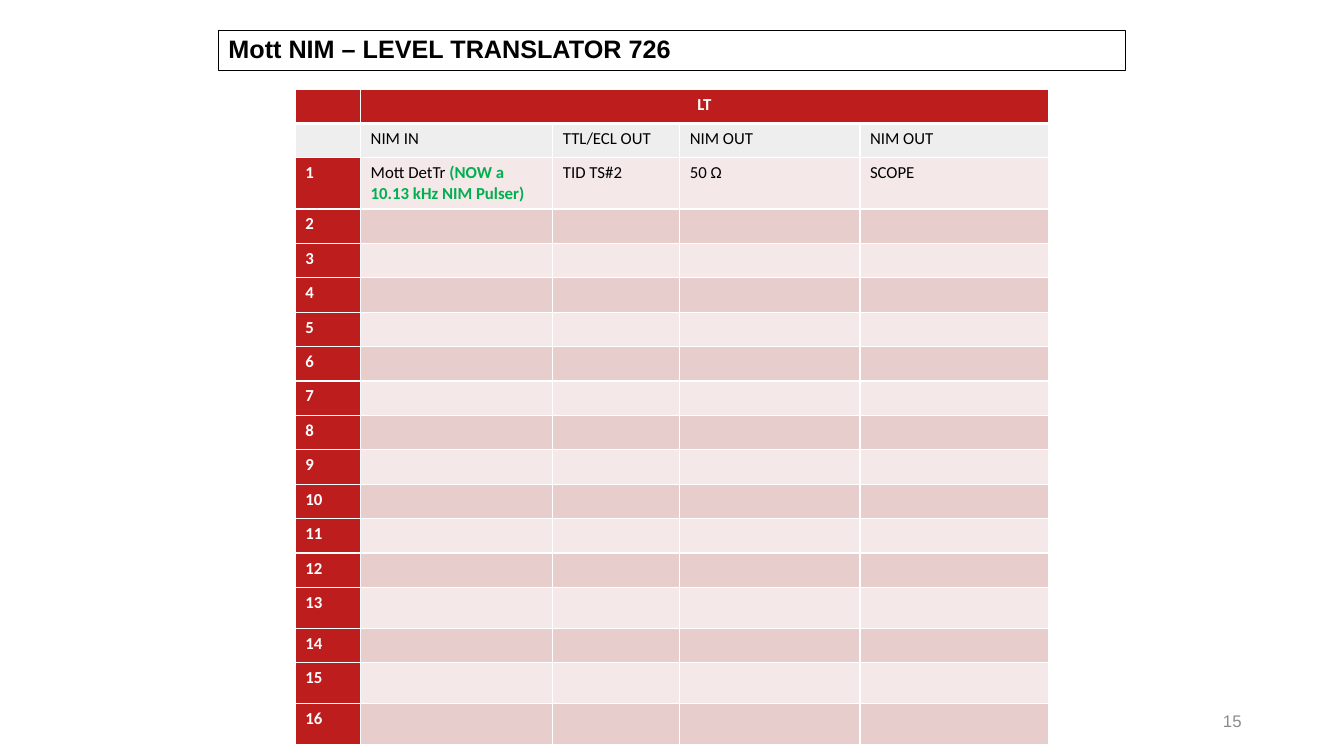
from lxml import etree
from pptx import Presentation
from pptx.dml.color import RGBColor
from pptx.enum.text import MSO_ANCHOR, MSO_AUTO_SIZE, PP_ALIGN
from pptx.oxml.ns import qn
from pptx.util import Pt

LEFT, CENTER, RIGHT = PP_ALIGN.LEFT, PP_ALIGN.CENTER, PP_ALIGN.RIGHT
MIDDLE = MSO_ANCHOR.MIDDLE
NO_FIT = MSO_AUTO_SIZE.NONE

BLACK = RGBColor(0x00, 0x00, 0x00)
WHITE = RGBColor(0xFF, 0xFF, 0xFF)
GREY = RGBColor(0x8C, 0x8C, 0x8C)
GREEN = RGBColor(0x00, 0xB0, 0x50)
RED = RGBColor(0xBE, 0x1D, 0x1D)
PALE_GREY = RGBColor(0xEE, 0xEE, 0xEE)
LIGHT_ROSE = RGBColor(0xF4, 0xE8, 0xE8)
ROSE = RGBColor(0xE8, 0xCD, 0xCD)

COLUMN_WIDTHS = [46.6, 137.3, 90.7, 128.7, 134.5]
ROW_HEIGHT, TALL_ROW_HEIGHT = 24.6, 29.2
TALL_CHANNELS = {13, 15, 16}
CHANNELS = range(1, 17)
SIGNALS = ["NIM IN", "TTL/ECL OUT", "NIM OUT", "NIM OUT"]
CHANNEL_1 = ["Mott DetTr ", "TID TS#2", "50 Ω", "SCOPE"]
PULSER_NOTE = "(NOW a 10.13 kHz NIM Pulser)"


class SlideBuilder:
    """Holds the text formats and the slide that is being filled."""

    title_format = {"name": "Arial", "size": Pt(18), "bold": True}
    number_format = {"name": "Arial", "size": Pt(12), "bold": False}
    plain_format = {"name": "Calibri", "size": Pt(12), "bold": False}
    bold_format = {"name": "Calibri", "size": Pt(12), "bold": True}

    def __init__(self, slide):
        self.slide = slide

    def add_text(self, paragraph, text, text_format, color):
        run = paragraph.add_run()
        run.text = text
        for attribute, value in text_format.items():
            setattr(run.font, attribute, value)
        run.font.color.rgb = color

    def title(self, text, left, top, width, height):
        heading = self.slide.shapes.title
        place = {"left": left, "top": top, "width": width, "height": height}
        for attribute, value in place.items():
            setattr(heading, attribute, Pt(value))
        heading.line.color.rgb = BLACK
        heading.line.width = Pt(0.25)
        frame = heading.text_frame
        frame.auto_size = NO_FIT
        frame.vertical_anchor = MIDDLE
        paragraph = frame.paragraphs[0]
        paragraph.alignment = LEFT
        paragraph.line_spacing = 0.9
        self.add_text(paragraph, text, self.title_format, BLACK)

    def page_number(self, text, left, top, width, height):
        box = self.slide.shapes.add_textbox(Pt(left), Pt(top), Pt(width), Pt(height))
        frame = box.text_frame
        frame.word_wrap = True
        frame.vertical_anchor = MIDDLE
        frame.paragraphs[0].alignment = RIGHT
        self.add_text(frame.paragraphs[0], text, self.number_format, GREY)

    def table(self, left, top, widths, heights):
        frame = self.slide.shapes.add_table(
            len(heights), len(widths), Pt(left), Pt(top), Pt(sum(widths)), Pt(sum(heights))
        )
        table = frame.table
        for column, width in zip(table.columns, widths):
            column.width = Pt(width)
        for row, height in zip(table.rows, heights):
            row.height = Pt(height)
        return table

    def cell(self, cell, fill, text="", bold=False, color=BLACK, top=1, bottom=1):
        """Fill and border one cell; an empty one keeps the table's text size."""
        properties = cell._tc.get_or_add_tcPr()
        for side, width in {"lnL": 1, "lnR": 1, "lnT": top, "lnB": bottom}.items():
            border = etree.SubElement(properties, qn(f"a:{side}"), w=str(Pt(width)))
            paint = etree.SubElement(border, qn("a:solidFill"))
            etree.SubElement(paint, qn("a:srgbClr"), val=str(WHITE))
        cell.fill.solid()
        cell.fill.fore_color.rgb = fill
        paragraph = cell.text_frame.paragraphs[0]
        if text:
            self.add_text(paragraph, text, self.bold_format if bold else self.plain_format, color)
        else:
            etree.SubElement(paragraph._p, qn("a:endParaRPr"), sz="1200")
        return paragraph


def add_translator_table(builder):
    heights = [ROW_HEIGHT] * 2
    heights += [TALL_ROW_HEIGHT if n in TALL_CHANNELS else ROW_HEIGHT for n in CHANNELS]
    table = builder.table(211, 63.6, COLUMN_WIDTHS, heights)

    table.cell(0, 1).merge(table.cell(0, 4))
    for column, text in enumerate(["", "LT", "", "", ""]):
        heading = builder.cell(table.cell(0, column), RED, text, True, WHITE, bottom=3)
        heading.alignment = CENTER
    for column, text in enumerate([""] + SIGNALS):
        builder.cell(table.cell(1, column), PALE_GREY, text, top=3)

    for channel in CHANNELS:
        row = channel + 1
        builder.cell(table.cell(row, 0), RED, str(channel), True, WHITE)
        band = LIGHT_ROSE if channel % 2 else ROSE
        connections = CHANNEL_1 if channel == 1 else [""] * len(SIGNALS)
        for column, text in enumerate(connections, start=1):
            builder.cell(table.cell(row, column), band, text)
    source = table.cell(2, 1).text_frame.paragraphs[0]
    builder.add_text(source, PULSER_NOTE, builder.bold_format, GREEN)


def main():
    presentation = Presentation()
    presentation.slide_width = Pt(960)
    presentation.slide_height = Pt(540)
    title_only = presentation.slide_layouts[5]
    builder = SlideBuilder(presentation.slides.add_slide(title_only))
    builder.title("Mott NIM – LEVEL TRANSLATOR 726", 156, 21.6, 648, 28.4)
    add_translator_table(builder)
    builder.page_number("15", 678, 500.5, 216, 28.8)
    presentation.save("out.pptx")


if __name__ == "__main__":
    main()
